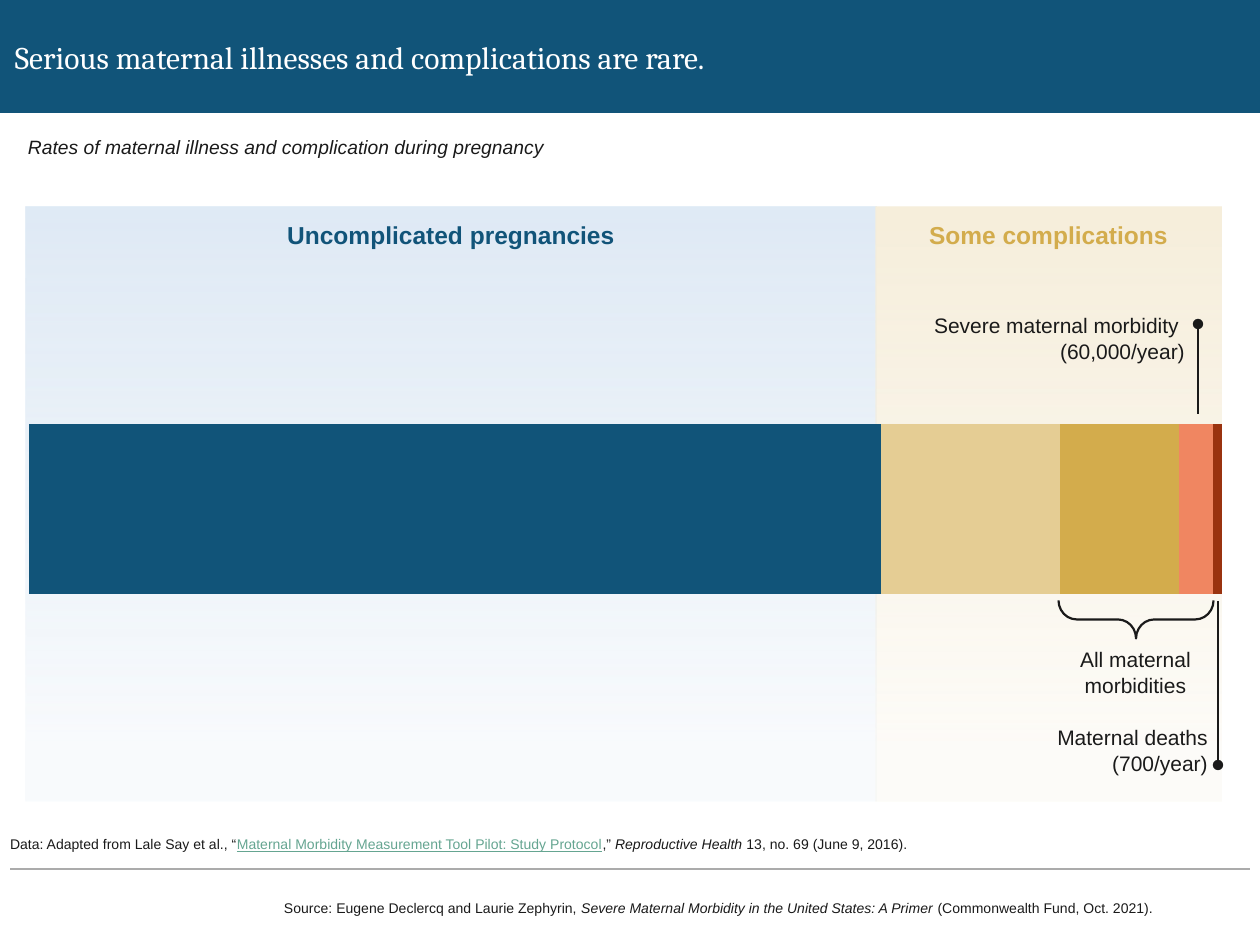
import pptx
import pptx.util
import pptx.dml.color
import pptx.chart.data
import pptx.enum.chart
import pptx.enum.dml
import pptx.enum.shapes
import pptx.enum.text
import pptx.oxml
import pptx.oxml.ns

Align = pptx.enum.text.PP_ALIGN
Anchor = pptx.enum.text.MSO_ANCHOR
Shape = pptx.enum.shapes.MSO_SHAPE

# Content: runs are (text, changes); boxes are px (left, top, width, height)
title = [[("Serious maternal illnesses and complications are rare.", {})]]
lead = [[("Rates of maternal illness and complication during pregnancy", {"italic": True})]]
data = [[
    ("Data: Adapted from Lale Say et al., “", {}),
    ("Maternal Morbidity Measurement Tool Pilot: Study Protocol",
     {"underline": True, "color": "link"}),
    (",” ", {}),
    ("Reproductive Health", {"italic": True}),
    (" 13, no. 69 (June 9, 2016).", {}),
]]
source = [[
    ("Source: Eugene Declercq and Laurie Zephyrin, ", {}),
    ("Severe Maternal Morbidity in the United States: A Primer ", {"italic": True}),
    ("(Commonwealth Fund, Oct. 2021).", {}),
]]
panels = [
    ("Uncomplicated pregnancies", 26, 850, "sky", "navy"),
    ("Some complications", 876, 345, "cream", "gold"),
]
shares = [("Series 1", 100, "navy"), ("Series 2", 21, "sand"), ("Series 3", 14, "gold"),
          ("Series 4", 4, "coral"), ("Series 5", 1, "rust")]
notes = [
    (["All maternal morbidities"], (1048, 641, 175, 63), Align.CENTER),
    (["Severe maternal morbidity ", "(60,000/year)"], (815, 307, 383, 63), Align.RIGHT),
    (["Maternal deaths", "(700/year)"], (929, 719, 292, 63), Align.RIGHT),
]
# Each line: from, to, colour, width, end that carries a dot
rule = ((1250, 869), (10, 869), "grey", 0.75, None)
leads = [((1218, 601), (1218, 765), "ink", 1.25, "tailEnd"),
         ((1198, 324), (1198, 414), "ink", 1.25, "headEnd")]

theme = {
    "color": {"navy": "115479", "gold": "D3AC4C", "sand": "E5CD94", "coral": "F08661",
              "rust": "9A330F", "sky": "DFEAF5", "cream": "F6EEDB", "ink": "1A1A1A",
              "white": "FFFFFF", "link": "65A591", "grey": "ABABAB"},
    "size": {"title": 18, "head": 14, "note": 12, "lead": 11, "chart": 10, "foot": 8},
    "sans": "Arial", "serif": "Cambria",
}


def px(n):
    return round(n * 914400 / 126)


def tint(name):
    return pptx.dml.color.RGBColor.from_string(theme["color"][name])


def put(obj, **vals):
    for key, val in vals.items():
        setattr(obj, key, val)


def style(font, size, color="ink", face="sans", **more):
    put(font, size=pptx.util.Pt(theme["size"][size]), name=theme[face], **more)
    font.color.rgb = tint(color)


def write(shape, paras, size, align=Align.LEFT, anchor=Anchor.TOP, inset=(0, 0, 0, 0), **look):
    frame = shape.text_frame
    sides = ("margin_left", "margin_top", "margin_right", "margin_bottom")
    put(frame, word_wrap=True, auto_size=pptx.enum.text.MSO_AUTO_SIZE.NONE,
        vertical_anchor=anchor, **dict(zip(sides, map(px, inset))))
    for i, runs in enumerate(paras):
        para = frame.add_paragraph() if i else frame.paragraphs[0]
        put(para, alignment=align, space_before=pptx.util.Pt(0))
        for text, diff in runs:
            run = para.add_run()
            run.text = text
            style(run.font, size, **{**look, **diff})


def place(shape, box):
    put(shape, **dict(zip(("left", "top", "width", "height"), map(px, box))))


def block(kind, box):
    shape = shapes.add_shape(kind, *map(px, box))
    shape.shadow.inherit = False
    return shape


def label(box, *args, **look):
    write(shapes.add_textbox(*map(px, box)), *args, **look)


def add(parent, tag, **attrs):
    node = pptx.oxml.ns.qn(tag)
    child = parent.makeelement(node, attrs)
    parent.append(child)


def draw(start, end, color, width, dot):
    line = shapes.add_connector(pptx.enum.shapes.MSO_CONNECTOR.STRAIGHT,
                                *map(px, start + end))
    line.line.width = pptx.util.Pt(width)
    line.line.color.rgb = tint(color)
    if dot:
        add(line.line._get_or_add_ln(), "a:" + dot, type="oval")
    add(line.element.spPr, "a:effectLst")


deck = pptx.Presentation()
put(deck, slide_width=px(1260), slide_height=px(945))
slide = deck.slides.add_slide(deck.slide_layouts[1])
shapes = slide.shapes
head, body = slide.placeholders

# Header band and footer
band = block(Shape.RECTANGLE, (0, 0, 1260, 113))
band.fill.solid()
band.fill.fore_color.rgb = tint("navy")
band.line.fill.background()
draw(*rule)
label((284, 900, 966, 16), source, "foot", anchor=Anchor.MIDDLE)

# Fading panels
for text, left, width, fill, color in panels:
    panel = block(Shape.RECTANGLE, (left, 207, width, 595))
    panel.line.fill.background()
    panel.fill.gradient()
    panel.fill.gradient_angle = 270
    for stop, spot in zip(panel.fill.gradient_stops, (0, 0.9)):
        stop.position = spot
        stop.color.rgb = tint(fill)
    fade = panel.element.findall(".//" + pptx.oxml.ns.qn("a:srgbClr"))[1]
    add(fade, "a:alpha", val="20000")
    write(panel, [[(text, {})]], "head", Align.CENTER, inset=(13, 13, 13, 6),
          color=color, bold=True)

# Stacked bar
stats = pptx.chart.data.CategoryChartData(number_format="General")
stats.categories = ["1"]
for name, share, _ in shares:
    stats.add_series(name, [share])
chart = shapes.add_chart(pptx.enum.chart.XL_CHART_TYPE.BAR_STACKED,
                         *map(px, (0, 251, 1240, 541)), stats).chart
put(chart, has_legend=False, has_title=False)
style(chart.font, "chart")
put(chart.plots[0], gap_width=180, overlap=100, vary_by_categories=False)
put(chart.value_axis, minimum_scale=0, maximum_scale=142, has_major_gridlines=False,
    visible=False)
chart.category_axis.visible = False
for bar, (_, _, color) in zip(chart.plots[0].series, shares):
    bar.format.fill.solid()
    bar.format.fill.fore_color.rgb = tint(color)
area = chart.plots[0]._element.getparent()
for old in area.findall(pptx.oxml.ns.qn("c:layout")):
    area.remove(old)
parts = [("layoutTarget", "inner"), ("xMode", "edge"), ("yMode", "edge"),
         ("x", 0.023), ("y", 0.035), ("w", 0.976), ("h", 0.884)]
area.insert(0, pptx.oxml.parse_xml(
    f'<c:layout {pptx.oxml.ns.nsdecls("c")}><c:manualLayout>'
    + "".join(f'<c:{tag} val="{val}"/>' for tag, val in parts)
    + "</c:manualLayout></c:layout>"))

# Title and data line, brought above the band
for holder, box in ((body, (10, 801, 1240, 52)), (head, (15, 0, 1240, 113))):
    place(holder, box)
    shapes.element.append(holder.element)
write(head, title, "title", anchor=Anchor.MIDDLE, color="white", face="serif")
plain = body.text_frame.paragraphs[0]._p.get_or_add_pPr()
put(plain, marL=0, indent=0)
add(plain, "a:buNone")
write(body, data, "foot", anchor=Anchor.BOTTOM)
put(body.text_frame.paragraphs[0], line_spacing=0.9, space_after=pptx.util.Pt(6))

# Notes, brace and pointers
label((28, 135, 1225, 34), lead, "lead")
for lines, box, align in notes:
    label(box, [[(line, {})] for line in lines], "note", align, inset=(13, 6, 13, 6))
brace = block(Shape.RIGHT_BRACE, (1117, 542, 38, 155))
brace.rotation = 90
brace.adjustments[0] = 0.48
brace.fill.background()
brace.line.width = pptx.util.Pt(1.25)
brace.line.color.rgb = tint("ink")
for lead_line in leads:
    draw(*lead_line)

deck.save("out.pptx")
